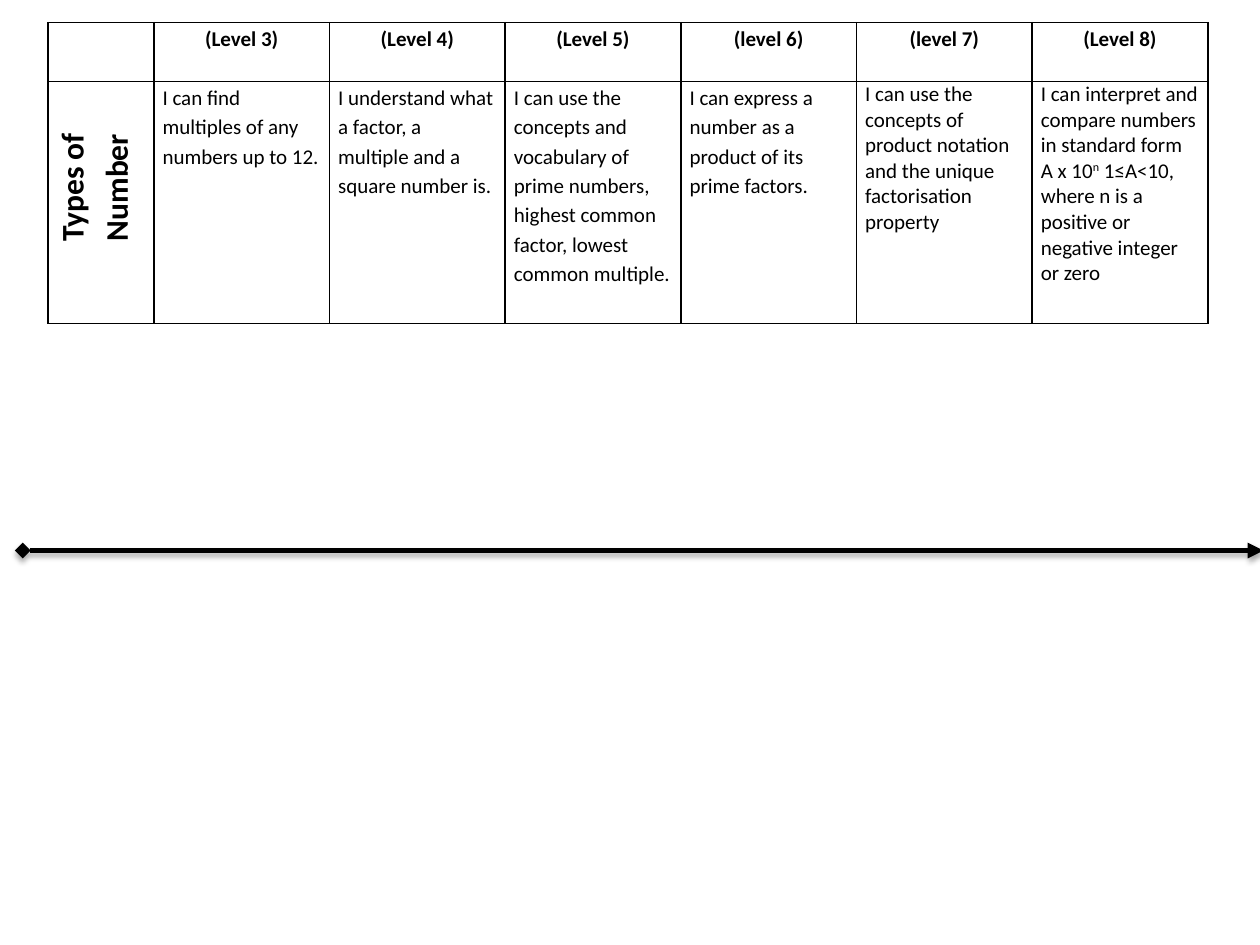
"""Build a slide with a table of number levels above a progress arrow."""
from lxml import etree
from pptx import Presentation, util as u
from pptx.dml.color import RGBColor
from pptx.enum import shapes, text
from pptx.oxml import parse_xml
from pptx.oxml.ns import nsdecls, qn

COLORS = {"ink": "000000"}
LEVELS = ["(Level 3)", "(Level 4)", "(Level 5)", "(level 6)", "(level 7)", "(Level 8)"]
SKILLS = [
    ["I can find multiples of any numbers up to 12."],
    ["I understand what a factor, a multiple and a square number is."],
    ["I can use the concepts and vocabulary of prime numbers, highest common factor, "
     "lowest common multiple."],
    ["I can express a number as a product of its prime factors."],
    ["I can use the concepts of product notation and the unique factorisation property"],
    ["I can interpret and compare numbers in standard form A x 10", "n",
     " 1≤A<10, where n is a positive or negative integer or zero"],
]


def write(cell, pieces, size=12, bold=False, align=text.PP_ALIGN.LEFT, spacing=1.15):
    para = cell.text_frame.paragraphs[0]
    para.alignment = align
    para.line_spacing = spacing
    for index, piece in enumerate(pieces):
        span = para.add_run()
        span.text = piece
        span.font.name = "Calibri"
        span.font.size = u.Pt(size)
        span.font.bold = bold
        span.font.color.rgb = RGBColor.from_string(COLORS["ink"])
        if index == 1:
            span.font._element.set("baseline", "30000")


deck = Presentation()
deck.slide_width, deck.slide_height = u.Pt(720), u.Pt(540)
page = deck.slides.add_slide(deck.slide_layouts[6])

widths = [60.5] + [100.4] * len(LEVELS)
heights = [33.7, 138.2]
table = page.shapes.add_table(
    len(heights), len(widths), u.Pt(27.4), u.Pt(12.9), u.Pt(sum(widths)), u.Pt(sum(heights))
).table
table.first_row = table.horz_banding = False
for column, width in zip(table.columns, widths):
    column.width = u.Pt(width)
for row, height in zip(table.rows, heights):
    row.height = u.Pt(height)

for cell in table.iter_cells():
    cell.margin_left = cell.margin_right = u.Pt(5)
    cell.margin_top = cell.margin_bottom = u.Pt(0)
    properties = cell._tc.get_or_add_tcPr()
    for side in "LRTB":
        properties.append(parse_xml(
            f'<a:ln{side} {nsdecls("a")} w="12700"><a:solidFill>'
            f'<a:srgbClr val="{COLORS["ink"]}"/></a:solidFill></a:ln{side}>'))
    cell.fill.background()

for number, (level, skill) in enumerate(zip(LEVELS, SKILLS), 1):
    write(table.cell(0, number), [level], bold=True, align=text.PP_ALIGN.CENTER)
    write(table.cell(1, number), skill, spacing=1.15 if number < 5 else 1)

heading = table.cell(1, 0)
heading.margin_left = u.Pt(22)
heading._tc.get_or_add_tcPr().set("vert", "vert270")
write(heading, ["Types of Number"], size=18, bold=True, align=text.PP_ALIGN.CENTER)

arrow = page.shapes.add_connector(
    shapes.MSO_CONNECTOR.STRAIGHT, u.Pt(13), u.Pt(314.6), u.Pt(722), u.Pt(314.6))
arrow.line.color.rgb = RGBColor.from_string(COLORS["ink"])
arrow.line.width = u.Pt(3)
outline = arrow.line._get_or_add_ln()
for end, kind in (("headEnd", "diamond"), ("tailEnd", "triangle")):
    etree.SubElement(outline, qn(f"a:{end}"), type=kind)
arrow._element.spPr.append(parse_xml(
    f'<a:effectLst {nsdecls("a")}>'
    f'<a:outerShdw blurRad="{u.Pt(3.1)}" dist="{u.Pt(1.8)}" dir="5400000" rotWithShape="0">'
    f'<a:srgbClr val="{COLORS["ink"]}"><a:alpha val="35000"/></a:srgbClr>'
    '</a:outerShdw></a:effectLst>'))

deck.save("out.pptx")
